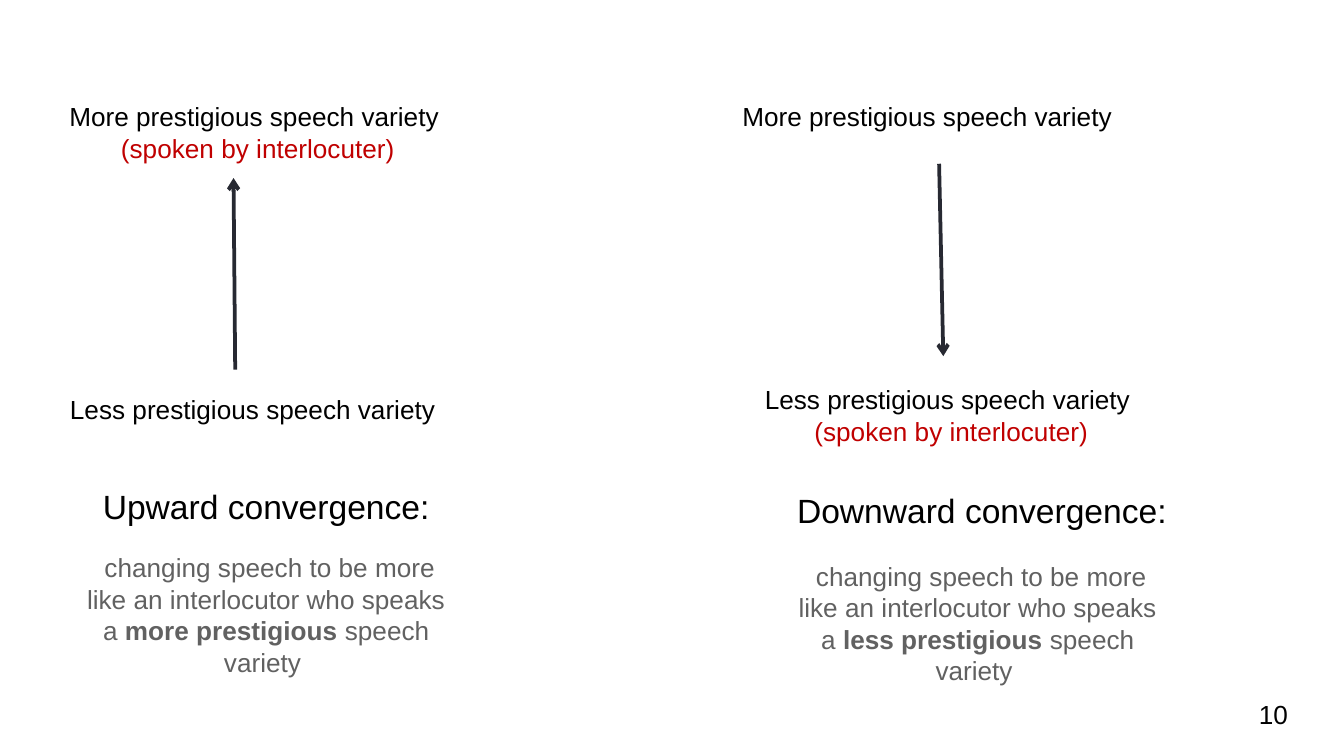
from pptx import Presentation
from pptx.dml.color import RGBColor as Rgb
from pptx.enum.shapes import MSO_CONNECTOR as Conn
from pptx.enum.text import MSO_ANCHOR as Anchor, PP_ALIGN as Align
from pptx.oxml.ns import qn
from pptx.util import Pt
from lxml.etree import SubElement as sub

PX = 5715  # 160 px to the inch
HUE = {"ink": "000000", "red": "C00000", "gray": "616161", "line": "272932"}


def scale(*nums):
    return [n * PX for n in nums]


def add_text(box, paras, size=14, align=Align.CENTER, **form):
    """Each paragraph is a list of (text, colour, bold) runs."""
    frame = slide.shapes.add_textbox(*scale(*box)).text_frame
    for key, val in ({"word_wrap": True} | form).items():
        setattr(frame, key, val)
    for i, runs in enumerate(paras):
        para = frame.add_paragraph() if i else frame.paragraphs[0]
        para.alignment = align
        for text, hue, bold in runs:
            run = para.add_run()
            run.text = text
            look = {"name": "Arial", "size": Pt(size), "bold": bold}
            for key, val in look.items():
                setattr(run.font, key, val)
            run.font.color.rgb = Rgb.from_string(HUE[hue])


deck = Presentation()
deck.slide_width, deck.slide_height = scale(1600, 900)
slide = deck.slides.add_slide(deck.slide_layouts[6])

# Page number
pad = {"margin_" + side: 16 * PX for side in ("left", "right", "top", "bottom")}
add_text((1483, 816, 96, 69), [[("10", "ink", False)]], align=Align.LEFT,
         vertical_anchor=Anchor.MIDDLE, **pad)

# Ends of each scale; the interlocutor's end has a second line
ends = [
    ("More", (-88, 112, 790, 91), True),
    ("Less", (61, 461, 480, 54), False),
    ("More", (864, 112, 480, 54), False),
    ("Less", (827, 449, 611, 91), True),
]
for word, box, spoken in ends:
    label = f"{word} prestigious speech variety" + (" " if spoken else "")
    paras = [[(label, "ink", False)]]
    if spoken:
        paras.append([("(spoken by interlocuter)", "red", False)])
    add_text(box, paras)

# Arrows
for line in [(280, 440, 278, 212), (1118, 195, 1123, 424)]:
    arrow = slide.shapes.add_connector(Conn.STRAIGHT, *scale(*line))
    arrow.line.color.rgb = Rgb.from_string(HUE["line"])
    arrow.line.width = Pt(2)
    sub(arrow.line._get_or_add_ln(), qn("a:tailEnd"), type="arrow")
    sub(arrow._element.spPr, qn("a:effectLst"))

# Headings and definitions
terms = [
    ("Upward", "more", (21, 570, 592, 102), (77, 649, 480, 166)),
    ("Downward", "less", (929, 575, 480, 64), (924, 659, 480, 205)),
]
for way, word, head, body in terms:
    add_text(head, [[(f"{way} convergence:", "ink", False)]], size=18)
    add_text(body, [[
        (" changing speech to be more like an interlocutor who speaks a ",
         "gray", False),
        (f"{word} prestigious", "gray", True),
        (" speech variety ", "gray", False),
    ]])

deck.save("out.pptx")
